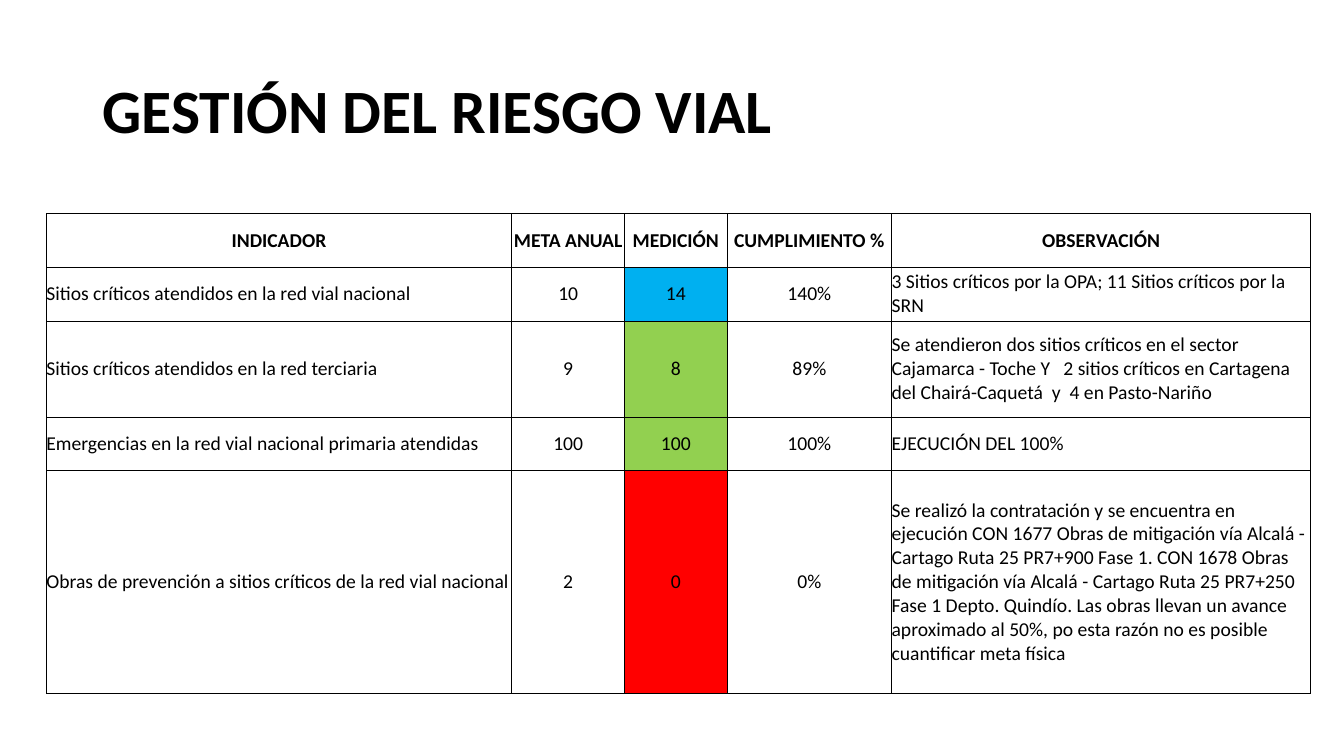
from dataclasses import dataclass

from lxml import etree
from pptx import Presentation
from pptx.dml.color import RGBColor
from pptx.enum import text
from pptx.oxml import ns
from pptx.util import Pt


@dataclass(frozen=True)
class Theme:
    font: str = "Calibri"
    title_size: int = 44
    table_size: int = 14
    ink: str = "000000"
    paper: str = "FFFFFF"
    exceeded: str = "00B0F0"
    on_track: str = "92D050"
    missed: str = "FF0000"
    border: float = 0.5
    top_border: float = 1


class SlideBuilder:
    def __init__(self, slide, theme):
        self.slide = slide
        self.theme = theme

    def format_text(self, frame, size, bold, align):
        frame.word_wrap = True
        frame.vertical_anchor = text.MSO_ANCHOR.MIDDLE
        for paragraph in frame.paragraphs:
            paragraph.alignment = align
            for run in paragraph.runs:
                run.font.name = self.theme.font
                run.font.size = Pt(size)
                run.font.bold = bold
                run.font.color.rgb = RGBColor.from_string(self.theme.ink)

    def title(self, wording, left, top, width, height):
        heading = self.slide.shapes.title
        heading.left, heading.top = Pt(left), Pt(top)
        heading.width, heading.height = Pt(width), Pt(height)
        heading.text_frame.text = wording
        heading.text_frame.paragraphs[0].line_spacing = 0.9
        self.format_text(heading.text_frame, self.theme.title_size, True, text.PP_ALIGN.LEFT)

    def cell_borders(self, cell, top_width):
        # Borders come before the fill in the cell properties
        properties = cell._tc.get_or_add_tcPr()
        widths = {"L": self.theme.border, "R": self.theme.border,
                  "T": top_width, "B": self.theme.border}
        for position, (side, width) in enumerate(widths.items()):
            line = etree.Element(ns.qn(f"a:ln{side}"), w=str(Pt(width)))
            fill = etree.SubElement(line, ns.qn("a:solidFill"))
            etree.SubElement(fill, ns.qn("a:srgbClr"), val=self.theme.ink)
            properties.insert(position, line)

    def cell(self, cell, wording, fill, bold, align, top_width):
        cell.text_frame.text = wording
        cell.margin_left = cell.margin_right = cell.margin_top = cell.margin_bottom = 0
        cell.vertical_anchor = text.MSO_ANCHOR.MIDDLE
        self.format_text(cell.text_frame, self.theme.table_size, bold, align)
        cell.fill.solid()
        cell.fill.fore_color.rgb = RGBColor.from_string(fill)
        self.cell_borders(cell, top_width)

    def table(self, header, records, ratings, left, top, widths, heights):
        grid = self.slide.shapes.add_table(
            len(heights), len(widths), Pt(left), Pt(top), Pt(sum(widths)), Pt(sum(heights))).table
        grid.first_row = grid.horz_banding = False
        for column, width in zip(grid.columns, widths):
            column.width = Pt(width)
        for row, height in zip(grid.rows, heights):
            row.height = Pt(height)

        prose = (header.index("INDICADOR"), header.index("OBSERVACIÓN"))
        measured = header.index("MEDICIÓN")
        for r, record in enumerate([header, *records]):
            is_header = r == 0
            for c, wording in enumerate(record):
                rated = c == measured and not is_header
                left_aligned = c in prose and not is_header
                self.cell(
                    grid.cell(r, c), wording,
                    fill=ratings[r - 1] if rated else self.theme.paper,
                    bold=is_header,
                    align=text.PP_ALIGN.LEFT if left_aligned else text.PP_ALIGN.CENTER,
                    top_width=self.theme.top_border if is_header else self.theme.border)


HEADER = ["INDICADOR", "META ANUAL", "MEDICIÓN", "CUMPLIMIENTO %", "OBSERVACIÓN"]
INDICATORS = [
    ["Sitios críticos atendidos en la red vial nacional", "10", "14", "140%",
     "3 Sitios críticos por la OPA; 11 Sitios críticos por la SRN"],
    ["Sitios críticos atendidos en la red terciaria", "9", "8", "89%",
     "Se atendieron dos sitios críticos en el sector Cajamarca - Toche Y   2 sitios críticos "
     "en Cartagena del Chairá-Caquetá  y  4 en Pasto-Nariño"],
    ["Emergencias en la red vial nacional primaria atendidas", "100", "100", "100%",
     "EJECUCIÓN DEL 100%"],
    ["Obras de prevención a sitios críticos de la red vial nacional", "2", "0", "0%",
     "Se realizó la contratación y se encuentra en ejecución CON 1677 Obras de mitigación "
     "vía Alcalá - Cartago Ruta 25 PR7+900 Fase 1. CON 1678 Obras de mitigación vía Alcalá - "
     "Cartago Ruta 25 PR7+250 Fase 1 Depto. Quindío. Las obras llevan un avance aproximado "
     "al 50%, po esta razón no es posible cuantificar meta física"],
]


def main():
    # Slide
    deck = Presentation()
    deck.slide_width, deck.slide_height = Pt(960), Pt(540)
    theme = Theme()
    builder = SlideBuilder(deck.slides.add_slide(deck.slide_layouts[5]), theme)

    # Heading
    builder.title("GESTIÓN DEL RIESGO VIAL", 66, 28.8, 828, 104.4)

    # Indicators, rated by the colour of the measurement
    builder.table(
        HEADER, INDICATORS,
        ratings=[theme.exceeded, theme.on_track, theme.on_track, theme.missed],
        left=33.1, top=152.6,
        widths=[332.5, 80.6, 73.2, 117.5, 299.4],
        heights=[38.3, 38.3, 68.6, 38.3, 159.2])

    deck.save("out.pptx")


if __name__ == "__main__":
    main()
